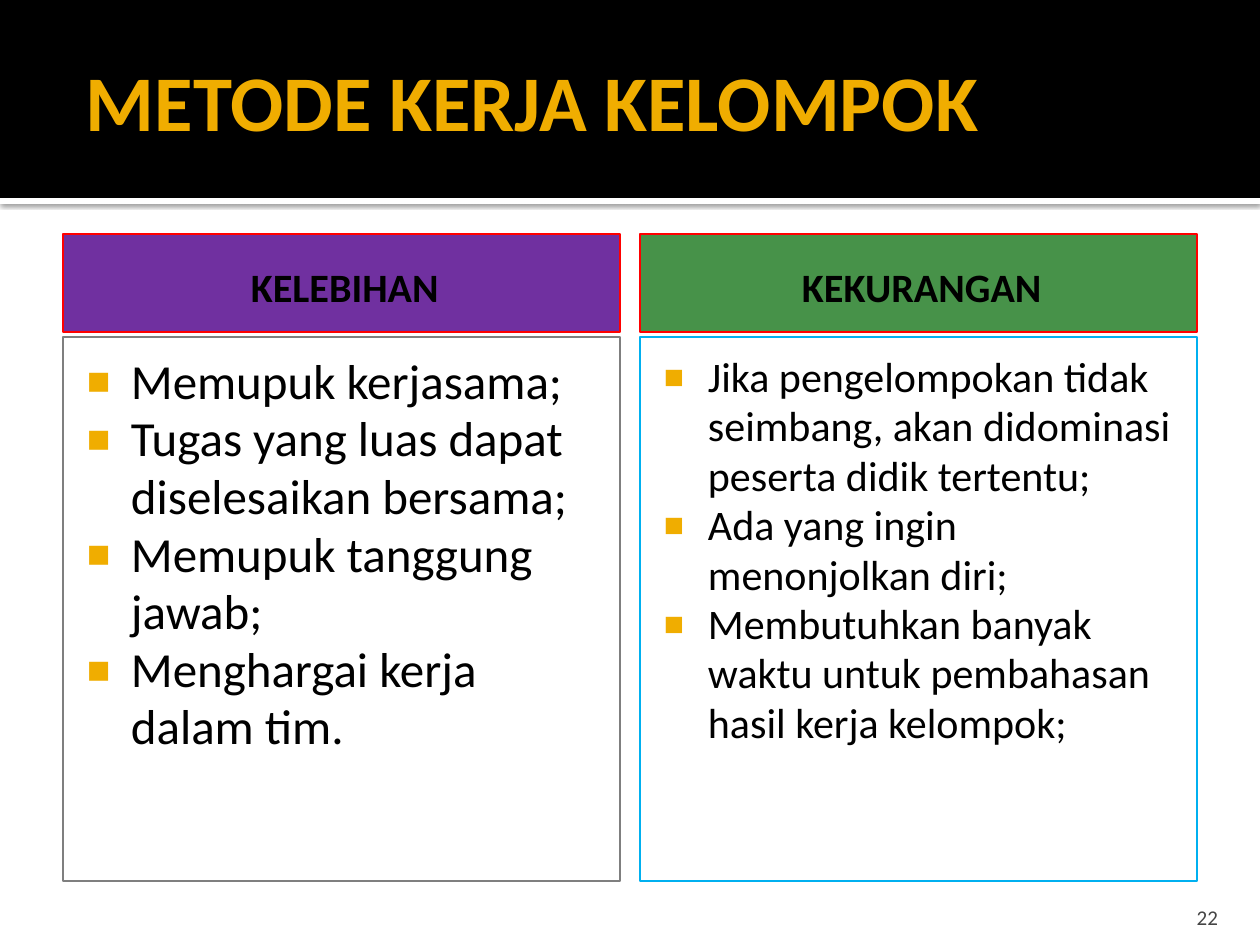
from lxml import etree
from pptx import Presentation
from pptx.dml.color import RGBColor
from pptx.enum.shapes import MSO_SHAPE
from pptx.enum.text import MSO_ANCHOR, PP_ALIGN
from pptx.oxml import parse_xml
from pptx.oxml.ns import nsdecls, qn
from pptx.util import Pt

RECTANGLE = MSO_SHAPE.RECTANGLE
TOP, MIDDLE, BOTTOM = MSO_ANCHOR.TOP, MSO_ANCHOR.MIDDLE, MSO_ANCHOR.BOTTOM
LEFT, CENTER, RIGHT = PP_ALIGN.LEFT, PP_ALIGN.CENTER, PP_ALIGN.RIGHT
PX = 914400 / 126
COLORS = {
    "black": "000000", "white": "FFFFFF", "gold": "F0AD00", "red": "FF0000",
    "purple": "7030A0", "green": "479249", "blue": "00B0F0",
    "gray": "7F7F7F", "number": "454545",
}

presentation = Presentation()
presentation.slide_width = round(1260 * PX)
presentation.slide_height = round(945 * PX)
slide = presentation.slides.add_slide(presentation.slide_layouts[6])


def add_box(box, fill=None, line=None):
    shape = slide.shapes.add_shape(RECTANGLE, *[round(value * PX) for value in box])
    shape.shadow.inherit = False
    if fill:
        shape.fill.solid()
        shape.fill.fore_color.rgb = RGBColor.from_string(COLORS[fill])
    else:
        shape.fill.background()
    if line:
        shape.line.color.rgb = RGBColor.from_string(COLORS[line])
        shape.line.width = Pt(0.75)
    else:
        shape.line.fill.background()
    return shape


def write_text(shape, lines, size, color, margins, anchor, align, bold=False, bullets=False):
    frame = shape.text_frame
    frame.word_wrap = True
    frame.vertical_anchor = anchor
    for side, margin in zip(("left", "top", "right", "bottom"), margins):
        setattr(frame, f"margin_{side}", round(margin * PX))
    for index, line in enumerate(lines):
        paragraph = frame.paragraphs[0] if index == 0 else frame.add_paragraph()
        paragraph.alignment = align
        run = paragraph.add_run()
        run.text = line
        font_format = {"name": "Calibri", "size": Pt(size), "bold": bold}
        for name, value in font_format.items():
            setattr(run.font, name, value)
        run.font.color.rgb = RGBColor.from_string(COLORS[color])
        if bullets:
            paragraph.line_spacing = 0.98
            properties = paragraph._p.get_or_add_pPr()
            properties.set("marL", str(round(60 * PX)))
            properties.set("indent", str(round(-44 * PX)))
            bullet_color = etree.SubElement(properties, qn("a:buClr"))
            etree.SubElement(bullet_color, qn("a:srgbClr"), val=COLORS["gold"])
            etree.SubElement(properties, qn("a:buSzPct"), val="80000")
            etree.SubElement(properties, qn("a:buFont"), typeface="Arial")
            etree.SubElement(properties, qn("a:buChar"), char="■")


stripe = add_box((0, 198, 1260, 6), "white")
shadow = parse_xml(
    f'<a:outerShdw {nsdecls("a")} blurRad="31750" dist="10160" dir="5400000" '
    'algn="tl" rotWithShape="0"><a:srgbClr val="000000">'
    '<a:alpha val="60000"/></a:srgbClr></a:outerShdw>'
)
stripe._element.spPr.find(qn("a:effectLst")).append(shadow)
add_box((0, 0, 1260, 198), "black")

title = slide.shapes.add_textbox(*[round(value * PX) for value in (73, 32, 1134, 126)])
write_text(title, ["METODE KERJA KELOMPOK"], 45, "gold", (13, 16, 6, 6), MIDDLE, LEFT, bold=True)

columns = [
    ("KELEBIHAN", "purple", "gray", 28, [
        "Memupuk kerjasama;",
        "Tugas yang luas dapat diselesaikan bersama;",
        "Memupuk tanggung jawab;",
        "Menghargai kerja dalam tim.",
    ]),
    ("KEKURANGAN", "green", "blue", 24, [
        "Jika pengelompokan tidak seimbang, akan didominasi peserta didik tertentu;",
        "Ada yang ingin menonjolkan diri;",
        "Membutuhkan banyak waktu untuk pembahasan hasil kerja kelompok;",
    ]),
]
for index, (heading, fill, outline, size, points) in enumerate(columns):
    left = 63 + index * 577
    header = add_box((left, 234, 557, 98), fill, "red")
    write_text(header, [heading], 23, "black", (20, 13, 13, 6), MIDDLE, CENTER, bold=True)
    body = add_box((left, 337, 557, 544), line=outline)
    write_text(body, points, size, "black", (8, 16, 13, 6), TOP, LEFT, bullets=True)

number = slide.shapes.add_textbox(*[round(value * PX) for value in (1130, 892, 101, 38)])
write_text(number, ["22"], 12, "number", (13, 6, 13, 0), BOTTOM, RIGHT)

presentation.save("out.pptx")
